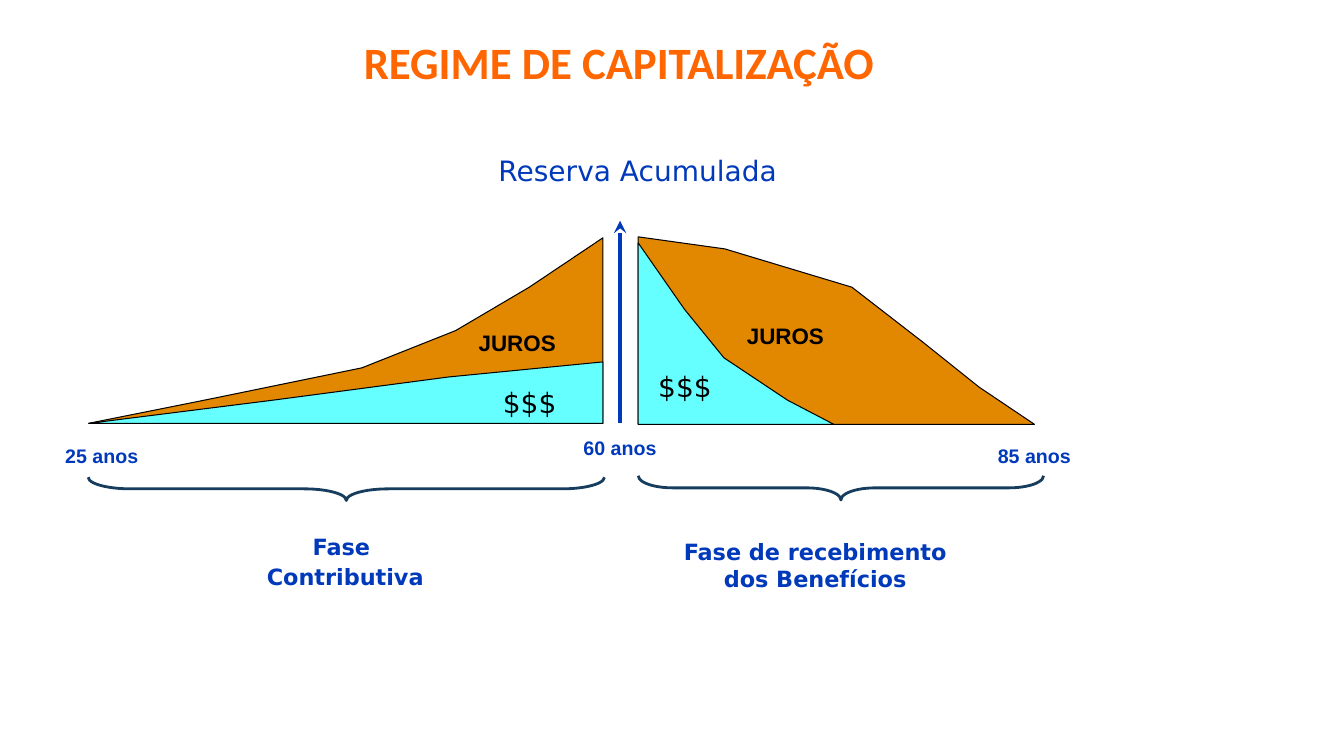
from dataclasses import dataclass
from typing import Optional

from lxml import etree
from pptx import Presentation
from pptx import util as u
from pptx.dml.color import RGBColor
from pptx.enum import shapes, text
from pptx.oxml import ns

COLORS = {
    "interest": "E28700",
    "money": "66FFFF",
    "outline": "000000",
    "brace": "163D5E",
    "paper": "FFFFFF",
    "label": "0039BA",
    "title": "FF6600",
}
COLS, ROWS = 133.3, 75
WIDTH, HEIGHT = u.Inches(13.33), u.Inches(7.5)


@dataclass(frozen=True)
class Area:
    fill: str
    points: tuple[tuple[float, float], ...]


@dataclass(frozen=True)
class Brace:
    left: float
    top: float
    width: float
    height: float
    curve: float


@dataclass(frozen=True)
class Style:
    font: str
    size: int
    color: str
    bold: bool
    before: int
    spacing: Optional[float] = None
    hanging: bool = False


@dataclass(frozen=True)
class Label:
    lines: tuple[str, ...]
    style: Style
    left: float
    top: float
    width: float
    height: float


INTEREST = Style("Arial", 16, "outline", True, 8, 1.15, True)
MONEY = Style("DejaVu Sans", 20, "outline", False, 10, 1.15, True)
AGE = Style("Arial", 14, "label", True, 7)
PHASE = Style("DejaVu Sans", 16, "label", True, 8)
TIGHT_PHASE = Style("DejaVu Sans", 16, "label", True, 8, 0.7)
RESERVE = Style("DejaVu Sans", 20, "label", False, 10, 0.7)
TITLE = Style("Calibri", 32, "title", True, 0)

AREAS = (
    Area("interest", ((8.8, 42), (21.3, 39.5), (35.9, 36.5), (45.2, 32.8),
                      (52.5, 28.5), (59.8, 23.6), (59.8, 42))),
    Area("money", ((8.8, 42), (27.1, 39.7), (44.5, 37.4), (59.8, 35.9), (59.8, 42))),
    Area("interest", ((63.3, 23.5), (71.9, 24.7), (84.5, 28.5), (91.6, 34),
                      (97.1, 38.4), (102.6, 42.1), (63.3, 42.1))),
    Area("money", ((63.3, 24.1), (67.9, 30.7), (71.8, 35.5), (78.1, 39.7),
                   (82.7, 42.1), (63.3, 42.1))),
)
BRACES = (
    Brace(8.75, 47.35, 51.2, 2.3, 1.82),
    Brace(63.3, 47.2, 40.2, 2.4, 1.42),
)
LABELS = (
    Label(("JUROS",), INTEREST, 46.4, 31.8, 13.4, 4),
    Label(("$$$",), MONEY, 48.8, 37.3, 11, 4.8),
    Label(("JUROS",), INTEREST, 73, 31.1, 13.4, 4),
    Label(("$$$",), MONEY, 64.2, 35.7, 9.5, 4.8),
    Label(("25 anos",), AGE, 3.8, 43.6, 12.6, 3.3),
    Label(("60 anos",), AGE, 55.2, 42.8, 12.6, 3.3),
    Label(("85 anos",), AGE, 97.6, 43.6, 10, 3.3),
    Label(("Fase ", "Contributiva"), TIGHT_PHASE, 20.1, 53.1, 28.3, 5.8),
    Label(("Fase de recebimento dos Benefícios",), PHASE, 66.7, 52.9, 28.3, 6.3),
    Label(("Reserva Acumulada",), RESERVE, 42, 15.7, 42.5, 3.3),
)


def x(cols: float) -> int:
    return round(WIDTH * cols / COLS)


def y(rows: float) -> int:
    return round(HEIGHT * rows / ROWS)


def rgb(name: str) -> RGBColor:
    return RGBColor.from_string(COLORS[name])


def paint(sp, fill: str, line: str, weight: float) -> None:
    sp.shadow.inherit = False
    sp.fill.solid()
    sp.fill.fore_color.rgb = rgb(fill)
    sp.line.color.rgb = rgb(line)
    sp.line.width = u.Pt(weight)


def draw_area(s, area: Area) -> None:
    start, *rest = [(x(col), y(row)) for col, row in area.points]
    builder = s.shapes.build_freeform(*start)
    builder.add_line_segments(rest, close=True)
    paint(builder.convert_to_shape(), area.fill, "outline", 0.75)


def draw_brace(s, brace: Brace) -> None:
    length, depth = x(brace.width), y(brace.height)
    shift = (length - depth) // 2
    sp = s.shapes.add_shape(shapes.MSO_SHAPE.RIGHT_BRACE, x(brace.left) + shift,
                            y(brace.top) - shift, depth, length)
    sp.rotation = 90
    sp.adjustments[0] = brace.curve
    sp.adjustments[1] = 0.5
    paint(sp, "paper", "brace", 2)


def draw_reserve_arrow(s) -> None:
    arrow = s.shapes.add_connector(shapes.MSO_CONNECTOR.STRAIGHT,
                                   x(61.5), y(42), x(61.5), y(21.9))
    arrow.line.color.rgb = rgb("label")
    arrow.line.width = u.Pt(3)
    etree.SubElement(arrow.line._get_or_add_ln(), ns.qn("a:tailEnd"), type="stealth")
    etree.SubElement(arrow._element.spPr, ns.qn("a:effectLst"))


def write(tf, lines: tuple[str, ...], style: Style) -> None:
    tf.word_wrap = True
    for number, line in enumerate(lines):
        p = tf.add_paragraph() if number else tf.paragraphs[0]
        p.space_before = u.Pt(style.before)
        if style.spacing:
            p.line_spacing = style.spacing
        if style.hanging:
            p.alignment = text.PP_ALIGN.LEFT
            pPr = p._p.get_or_add_pPr()
            pPr.set("marL", str(u.Inches(0.38)))
            pPr.set("indent", str(u.Inches(-0.37)))
        else:
            p.alignment = text.PP_ALIGN.CENTER
        r = p.add_run()
        r.text = line
        r.font.name = style.font
        r.font.size = u.Pt(style.size)
        r.font.bold = style.bold
        r.font.color.rgb = rgb(style.color)


def draw_label(s, label: Label) -> None:
    sp = s.shapes.add_textbox(x(label.left), y(label.top), x(label.width), y(label.height))
    write(sp.text_frame, label.lines, label.style)
    sp.text_frame.auto_size = text.MSO_AUTO_SIZE.SHAPE_TO_FIT_TEXT


def place_title(s) -> None:
    sp = s.shapes.title
    sp.left, sp.top, sp.width, sp.height = x(16.4), y(2.2), x(90), y(7.9)
    tf = sp.text_frame
    tf.auto_size = text.MSO_AUTO_SIZE.NONE
    tf.vertical_anchor = text.MSO_ANCHOR.MIDDLE
    write(tf, ("REGIME DE CAPITALIZAÇÃO",), TITLE)


def main() -> None:
    prs = Presentation()
    prs.slide_width, prs.slide_height = WIDTH, HEIGHT
    s = prs.slides.add_slide(prs.slide_layouts.get_by_name("Title Only"))
    place_title(s)
    for area in AREAS:
        draw_area(s, area)
    for brace in BRACES:
        draw_brace(s, brace)
    draw_reserve_arrow(s)
    for label in LABELS:
        draw_label(s, label)
    prs.save("out.pptx")


if __name__ == "__main__":
    main()
